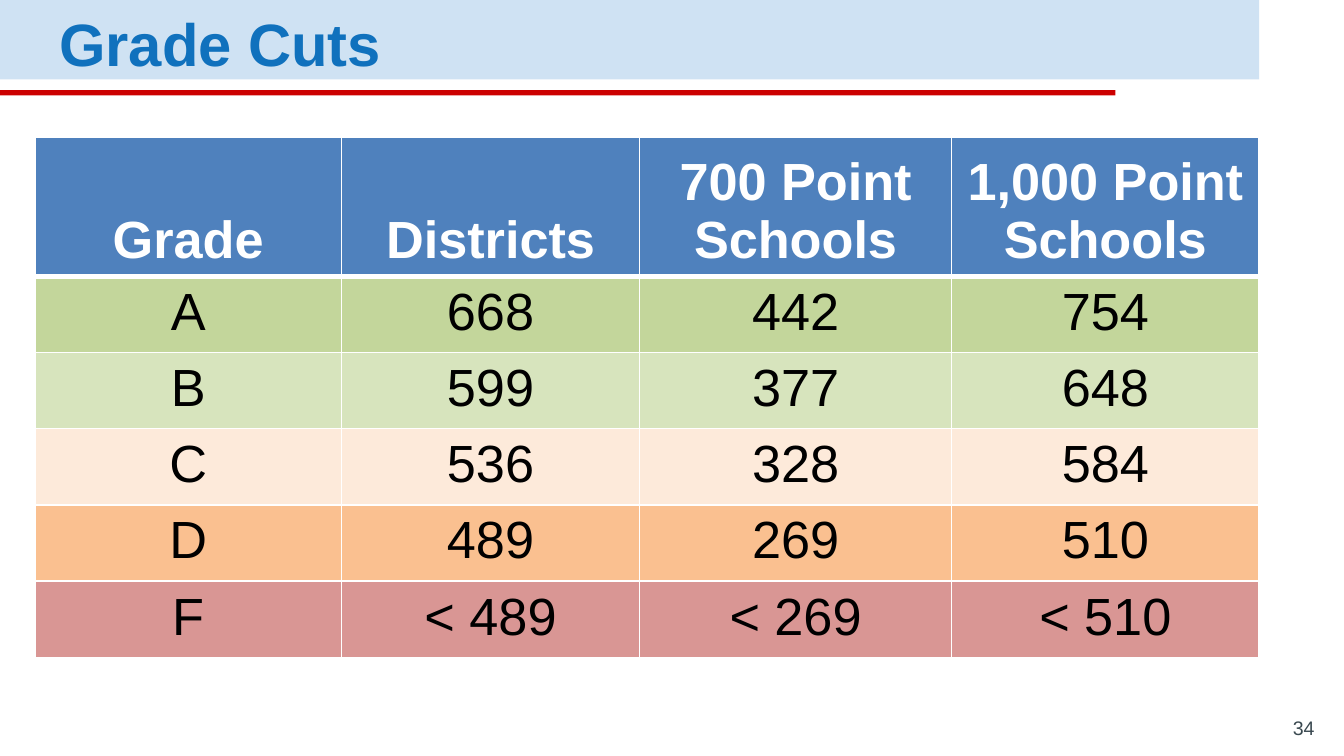
from lxml.etree import SubElement
from pptx import Presentation
from pptx.dml.color import RGBColor
from pptx.enum.shapes import MSO_SHAPE
from pptx.enum.text import MSO_ANCHOR, PP_ALIGN
from pptx.oxml.ns import qn
from pptx.util import Inches, Pt

# Content
TITLE = "Grade Cuts"
PAGE = "34"
HEAD = ["Grade", "Districts", "700 Point Schools", "1,000 Point Schools"]
GRADES = [
    ("A", "668", "442", "754"),
    ("B", "599", "377", "648"),
    ("C", "536", "328", "584"),
    ("D", "489", "269", "510"),
    ("F", "< 489", "< 269", "< 510"),
]
COLORS = {
    "band": "CFE2F3", "rule": "CC0000", "title": "1071BD", "page": "3A4950",
    "head": "4F81BD", "white": "FFFFFF", "black": "000000",
    "A": "C3D69B", "B": "D7E4BD", "C": "FDEADA", "D": "FAC090", "F": "D99694",
}
BARS = [("band", 0, 9.37, 0.59), ("rule", 0.67, 8.3, 0.04)]
WIDTHS = [2.28, 2.22, 2.32, 2.29]
HEAD_H, ROW_H = 0.91, 0.56


def color(key):
    return RGBColor.from_string(COLORS[key])


def write(frame, text, key, size, align, bold=False):
    frame.text = text
    para = frame.paragraphs[0]
    para.alignment = align
    font = para.runs[0].font
    for name, value in {"name": "Arial", "size": Pt(size), "bold": bold}.items():
        setattr(font, name, value)
    font.color.rgb = color(key)
    return para


def inset(frame, anchor):
    values = {"word_wrap": True, "vertical_anchor": anchor}
    for side in ("left", "top", "right", "bottom"):
        values["margin_" + side] = Inches(0.1)
    for name, value in values.items():
        setattr(frame, name, value)


def place(shape, *box):
    for name, value in zip(("left", "top", "width", "height"), box):
        setattr(shape, name, Inches(value))


def border(cell, widths):
    props = cell._tc.get_or_add_tcPr()
    for spot, (side, width) in enumerate(widths.items()):
        line = SubElement(props, qn("a:ln" + side), w=str(Pt(width)))
        fill = SubElement(line, qn("a:solidFill"))
        SubElement(fill, qn("a:srgbClr"), val=COLORS["white"])
        props.insert(spot, line)


# Widescreen, 16 to 9
deck = Presentation()
deck.slide_width, deck.slide_height = Inches(10), Inches(10 * 9 / 16)
slide = deck.slides.add_slide(deck.slide_layouts[5])
shapes = slide.shapes

# Header band and red rule
for key, top, width, height in BARS:
    bar = shapes.add_shape(MSO_SHAPE.RECTANGLE, 0, Inches(top),
                           Inches(width), Inches(height))
    bar.shadow.inherit = False
    bar.fill.solid()
    bar.fill.fore_color.rgb = color(key)
    bar.line.fill.background()

# Title, raised above the band
title = shapes.title
place(title, 0.34, 0.03, 9.03, 0.49)
inset(title.text_frame, MSO_ANCHOR.MIDDLE)
para = write(title.text_frame, TITLE, "title", 32, PP_ALIGN.LEFT, True)
para.line_spacing, para.space_after = 1.15, Pt(16)
shapes._spTree.append(title._element)

# Page number
page = shapes.add_textbox(0, 0, 0, 0)
place(page, 9.28, 5.33, 0.6, 0.26)
inset(page.text_frame, MSO_ANCHOR.BOTTOM)
write(page.text_frame, PAGE, "page", 10.5, PP_ALIGN.RIGHT)

# Grade table
rows = [HEAD] + GRADES
heights = [HEAD_H] + [ROW_H] * len(GRADES)
table = shapes.add_table(len(rows), len(HEAD), Inches(0.26), Inches(1.02),
                         Inches(sum(WIDTHS)), Inches(sum(heights))).table
for column, width in zip(table.columns, WIDTHS):
    column.width = Inches(width)
for r, (row, height) in enumerate(zip(rows, heights)):
    table.rows[r].height = Inches(height)
    top = r == 0
    for c, text in enumerate(row):
        cell = table.cell(r, c)
        cell.vertical_anchor = MSO_ANCHOR.BOTTOM if top else MSO_ANCHOR.TOP
        cell.fill.solid()
        cell.fill.fore_color.rgb = color("head" if top else row[0])
        write(cell.text_frame, text, "white" if top else "black", 28,
              PP_ALIGN.CENTER, top)
        border(cell, {"L": 1, "R": 1, "T": 3 if r == 1 else 1, "B": 3 if top else 1})

deck.save("out.pptx")
